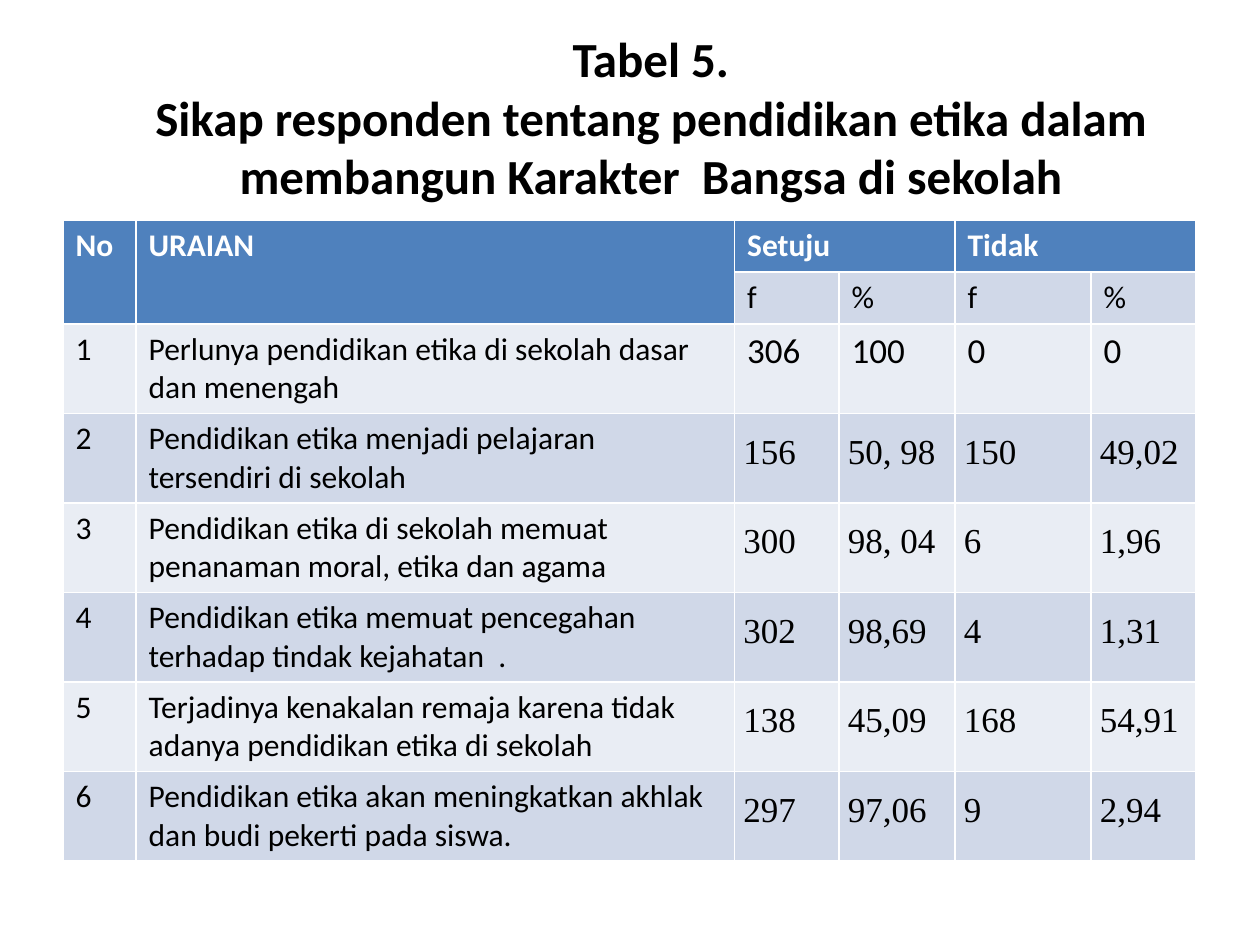
from dataclasses import dataclass

from pptx import Presentation
from pptx.dml.color import RGBColor
from pptx.enum import text
from pptx.util import Inches, Pt

COLORS = {"header": "4F81BD", "band": "D0D8E8", "light": "E9EDF4",
          "white": "FFFFFF", "black": "000000"}
COLUMN_WIDTHS = (0.58, 4.75, 0.83, 0.92, 1.08, 0.83)
HEADER_HEIGHT, BODY_HEIGHT = 0.41, 0.71


@dataclass(frozen=True)
class Statement:
    wording: str
    counts: tuple[str, str, str, str]  # agree f, agree %, disagree f, disagree %


STATEMENTS = (
    Statement("Perlunya pendidikan etika di sekolah dasar dan menengah",
              ("306", "100", "0", "0")),
    Statement("Pendidikan etika menjadi pelajaran tersendiri di sekolah",
              ("156", "50, 98", "150", "49,02")),
    Statement("Pendidikan etika di sekolah memuat penanaman moral, etika dan agama",
              ("300", "98, 04", "6", "1,96")),
    Statement("Pendidikan etika memuat pencegahan terhadap tindak kejahatan  .",
              ("302", "98,69", "4", "1,31")),
    Statement("Terjadinya kenakalan remaja karena tidak adanya pendidikan etika di sekolah",
              ("138", "45,09", "168", "54,91")),
    Statement("Pendidikan etika akan meningkatkan akhlak dan budi pekerti pada siswa.",
              ("297", "97,06", "9", "2,94")),
)


def write(frame, *lines: str, size: int = 18, font: str = "Calibri",
          color: str = "black", bold: bool = False, align=None,
          spacing: float | None = None) -> None:
    """Write one paragraph, with a line break between the lines."""
    paragraph = frame.paragraphs[0]
    paragraph.alignment = align
    paragraph.line_spacing = spacing
    for index, line in enumerate(lines):
        if index:
            paragraph.add_line_break()
        run = paragraph.add_run()
        run.text = line
        run.font.size = Pt(size)
        run.font.name = font
        run.font.bold = bold
        run.font.color.rgb = RGBColor.from_string(COLORS[color])


def paint(cell, color: str) -> None:
    cell.fill.solid()
    cell.fill.fore_color.rgb = RGBColor.from_string(COLORS[color])


def add_title(slide) -> None:
    title = slide.shapes.title
    title.left, title.top = Inches(0.5), Inches(0.3)
    title.width, title.height = Inches(9.33), Inches(1.25)
    title.text_frame.vertical_anchor = text.MSO_ANCHOR.MIDDLE
    write(title.text_frame, "Tabel 5.",
          "Sikap responden tentang pendidikan etika dalam "
          "membangun Karakter  Bangsa di sekolah",
          size=28, bold=True, align=text.PP_ALIGN.CENTER)


def fill_header(table) -> None:
    for column in range(len(COLUMN_WIDTHS)):
        paint(table.cell(0, column), "header")
        paint(table.cell(1, column), "header" if column < 2 else "band")
    # Headings: column, label, and the corner where the merged cell ends
    for column, label, corner in ((0, "No", (1, 0)), (1, "URAIAN", (1, 1)),
                                  (2, "Setuju", (0, 3)), (4, "Tidak", (0, 5))):
        heading = table.cell(0, column)
        heading.merge(table.cell(*corner))
        write(heading.text_frame, label, color="white", bold=True)
    for column, label in enumerate(("f", "%") * 2, start=2):
        write(table.cell(1, column).text_frame, label)


def fill_statement(table, number: int, statement: Statement) -> None:
    row = number + 1
    for column in range(len(COLUMN_WIDTHS)):
        paint(table.cell(row, column), "light" if number % 2 else "band")
    write(table.cell(row, 0).text_frame, str(number))
    write(table.cell(row, 1).text_frame, statement.wording)
    for column, count in enumerate(statement.counts, start=2):
        cell = table.cell(row, column)
        if number == 1:
            write(cell.text_frame, count, size=20)
            continue
        cell.margin_left = cell.margin_right = Inches(0.07)
        cell.margin_top = cell.margin_bottom = 0
        write(cell.text_frame, count, size=20, font="Times New Roman",
              align=text.PP_ALIGN.JUSTIFY, spacing=1.5)


def add_response_table(slide) -> None:
    heights = [HEADER_HEIGHT] * 2 + [BODY_HEIGHT] * len(STATEMENTS)
    table = slide.shapes.add_table(
        len(heights), len(COLUMN_WIDTHS), Inches(0.5), Inches(1.75),
        Inches(sum(COLUMN_WIDTHS)), Inches(sum(heights))).table
    for column, width in zip(table.columns, COLUMN_WIDTHS):
        column.width = Inches(width)
    for row, height in zip(table.rows, heights):
        row.height = Inches(height)
    fill_header(table)
    for number, statement in enumerate(STATEMENTS, start=1):
        fill_statement(table, number, statement)


def main() -> None:
    deck = Presentation()
    deck.slide_width, deck.slide_height = Inches(10), Inches(7.5)
    slide = deck.slides.add_slide(deck.slide_layouts[5])  # title only
    add_title(slide)
    add_response_table(slide)
    deck.save("out.pptx")


if __name__ == "__main__":
    main()
